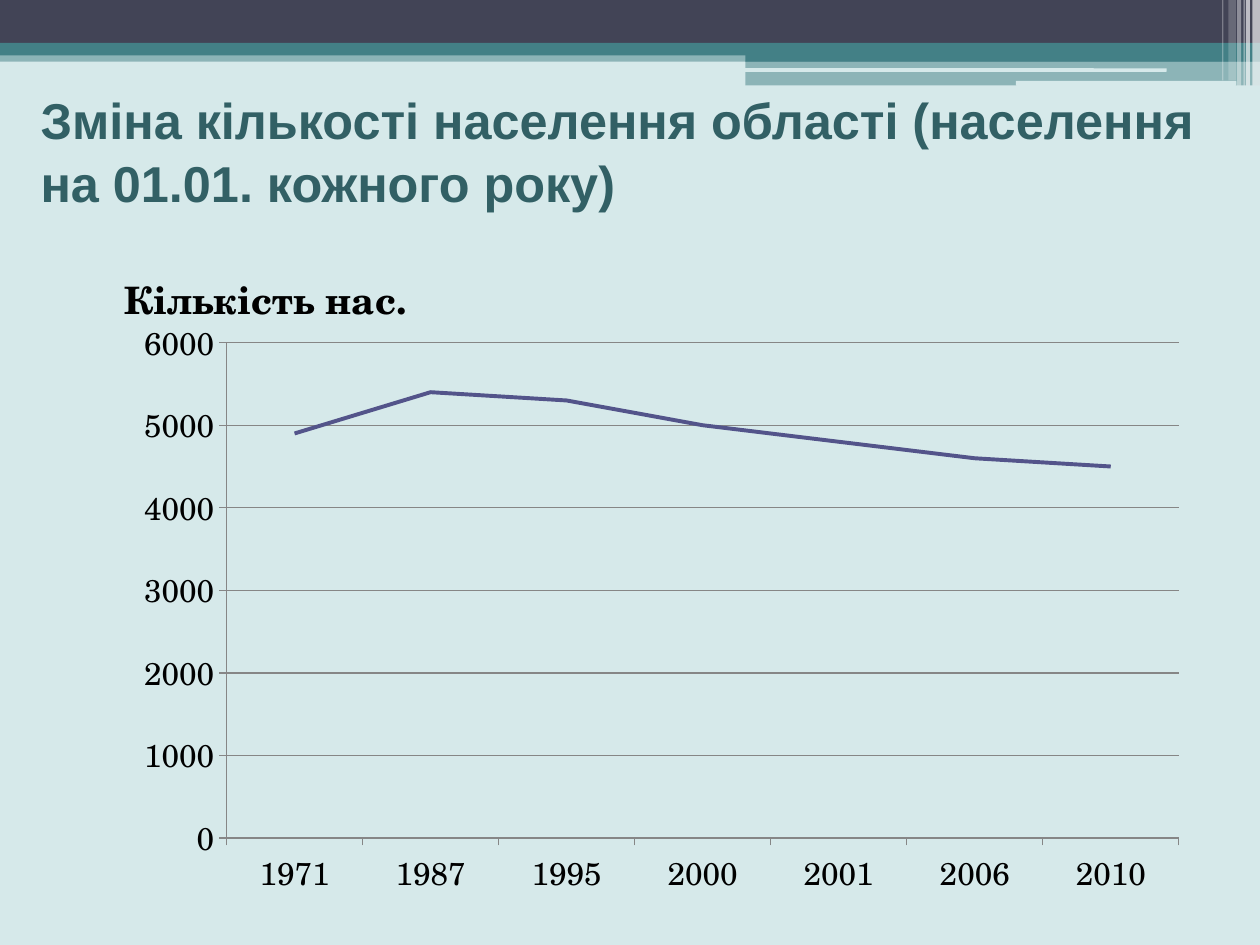
from typing import NamedTuple

from lxml.etree import SubElement
from pptx import Presentation
from pptx.chart.data import CategoryChartData
from pptx.dml.color import RGBColor
from pptx.enum.chart import XL_CHART_TYPE, XL_TICK_MARK
from pptx.enum.shapes import MSO_SHAPE
from pptx.enum.text import MSO_ANCHOR, MSO_AUTO_SIZE, PP_ALIGN
from pptx.oxml import parse_xml
from pptx.oxml.ns import nsdecls, qn
from pptx.util import Pt

COLORS = {
    "background": "D6E9EA",
    "dark": "424456",
    "teal": "438086",
    "white": "FFFFFF",
    "title": "326065",
    "text": "000000",
    "series": "53548A",
    "grid": "868686",
}
TITLE = "Зміна кількості населення області (населення на 01.01. кожного року)"
CHART_TITLE = "Кількість нас."
POPULATION = {
    "1971": 4900,
    "1987": 5400,
    "1995": 5300,
    "2000": 5000,
    "2001": 4800,
    "2006": 4600,
    "2010": 4500,
}


class Bar(NamedTuple):
    left: float
    top: float
    width: float
    height: float
    color: str
    opacity: int = 100
    rounded: bool = False


class Stripe(NamedTuple):
    left: float
    width: float
    height: float
    opacity: int


BARS = [
    Bar(0, 28.8, 720, 6.5, "teal", 50),
    Bar(0, 0, 720, 24.5, "dark"),
    Bar(0, 24.5, 720, 7.2, "teal"),
    Bar(426, 28, 294, 7.2, "teal"),
    Bar(426, 34.6, 294, 14.2, "teal", 50),
    Bar(425.5, 39, 241.2, 2, "background", rounded=True),
    Bar(580.5, 46.2, 126, 2.8, "background", rounded=True),
]
STRIPES = [
    Stripe(715.7, 4.3, 49, 65),
    Stripe(712, 2.2, 49, 65),
    Stripe(710.6, 0.7, 49, 60),
    Stripe(707, 2.2, 49, 40),
    Stripe(702, 4.3, 46, 20),
    Stripe(698.4, 0.7, 46, 30),
]


def rgb(name: str) -> RGBColor:
    return RGBColor.from_string(COLORS[name])


def apply_format(target, values: dict) -> None:
    for name, value in values.items():
        setattr(target, name, value)


def draw_bar(slide, bar: Bar) -> None:
    kind = MSO_SHAPE.ROUNDED_RECTANGLE if bar.rounded else MSO_SHAPE.RECTANGLE
    shape = slide.shapes.add_shape(kind, *(Pt(length) for length in bar[:4]))
    shape.shadow.inherit = False
    shape.line.fill.background()
    shape.fill.solid()
    shape.fill.fore_color.rgb = rgb(bar.color)
    if bar.opacity < 100:
        color = shape._element.spPr.find(qn("a:solidFill"))[0]
        SubElement(color, qn("a:alpha"), val=str(bar.opacity * 1000))


def format_title(title) -> None:
    apply_format(title, dict(left=Pt(16), top=Pt(66.2), width=Pt(704), height=Pt(38.2)))
    title.text = TITLE
    apply_format(title.text_frame, dict(
        word_wrap=True,
        auto_size=MSO_AUTO_SIZE.NONE,
        vertical_anchor=MSO_ANCHOR.MIDDLE,
    ))
    paragraph = title.text_frame.paragraphs[0]
    apply_format(paragraph, dict(alignment=PP_ALIGN.LEFT, line_spacing=1.05))
    apply_format(paragraph.runs[0].font, dict(name="Arial", size=Pt(28.8), bold=True))
    paragraph.runs[0].font.color.rgb = rgb("title")


def place(element, **values) -> None:
    """Give a chart title or plot area a manual layout in fractions of the chart."""
    for old in element.findall(qn("c:layout")):
        element.remove(old)
    parts = "".join(f'<c:{name} val="{value}"/>' for name, value in values.items())
    layout = parse_xml(
        f'<c:layout {nsdecls("c")}><c:manualLayout>{parts}</c:manualLayout></c:layout>'
    )
    text = element.find(qn("c:tx"))
    element.insert(0 if text is None else 1, layout)


def draw_chart(slide) -> None:
    data = CategoryChartData()
    data.categories = list(POPULATION)
    data.add_series("Series 1", list(POPULATION.values()))
    chart = slide.shapes.add_chart(
        XL_CHART_TYPE.LINE_STACKED, Pt(48.2), Pt(128.2), Pt(635), Pt(391), data
    ).chart
    chart.has_legend = False
    apply_format(chart.font, dict(name="TeX Gyre Schola", size=Pt(18)))
    chart.font.color.rgb = rgb("text")

    chart.has_title = True
    chart.chart_title.include_in_layout = False
    chart.chart_title.text_frame.text = CHART_TITLE
    font = chart.chart_title.text_frame.paragraphs[0].runs[0].font
    apply_format(font, dict(name="TeX Gyre Schola", size=Pt(21.6), bold=True))
    font.color.rgb = rgb("text")
    place(chart.chart_title._element, xMode="edge", yMode="edge", x=0.03, y=0.05)
    place(chart._chartSpace.chart.plotArea, layoutTarget="inner", xMode="edge",
          yMode="edge", x=0.128, y=0.173, w=0.857, h=0.724)

    value_axis, category_axis = chart.value_axis, chart.category_axis
    apply_format(value_axis, dict(
        minimum_scale=0, maximum_scale=6000, major_unit=1000, has_major_gridlines=True
    ))
    category_axis.has_major_gridlines = False
    for axis in (value_axis, category_axis):
        axis.major_tick_mark = XL_TICK_MARK.OUTSIDE
    for line in (value_axis.format.line, category_axis.format.line,
                 value_axis.major_gridlines.format.line):
        line.width = Pt(0.75)
        line.color.rgb = rgb("grid")

    plot = chart.plots[0]
    plot.vary_by_categories = False
    series = plot.series[0]
    series.smooth = False
    series.format.line.width = Pt(2.25)
    series.format.line.color.rgb = rgb("series")


def main() -> None:
    presentation = Presentation()
    apply_format(presentation, dict(slide_width=Pt(720), slide_height=Pt(540)))
    slide = presentation.slides.add_slide(presentation.slide_layouts[5])
    slide.background.fill.solid()
    slide.background.fill.fore_color.rgb = rgb("background")
    for bar in BARS:
        draw_bar(slide, bar)
    for stripe in STRIPES:
        draw_bar(slide, Bar(stripe.left, 0, stripe.width, stripe.height, "white", stripe.opacity))
    format_title(slide.shapes.title)
    draw_chart(slide)
    presentation.save("out.pptx")


if __name__ == "__main__":
    main()
